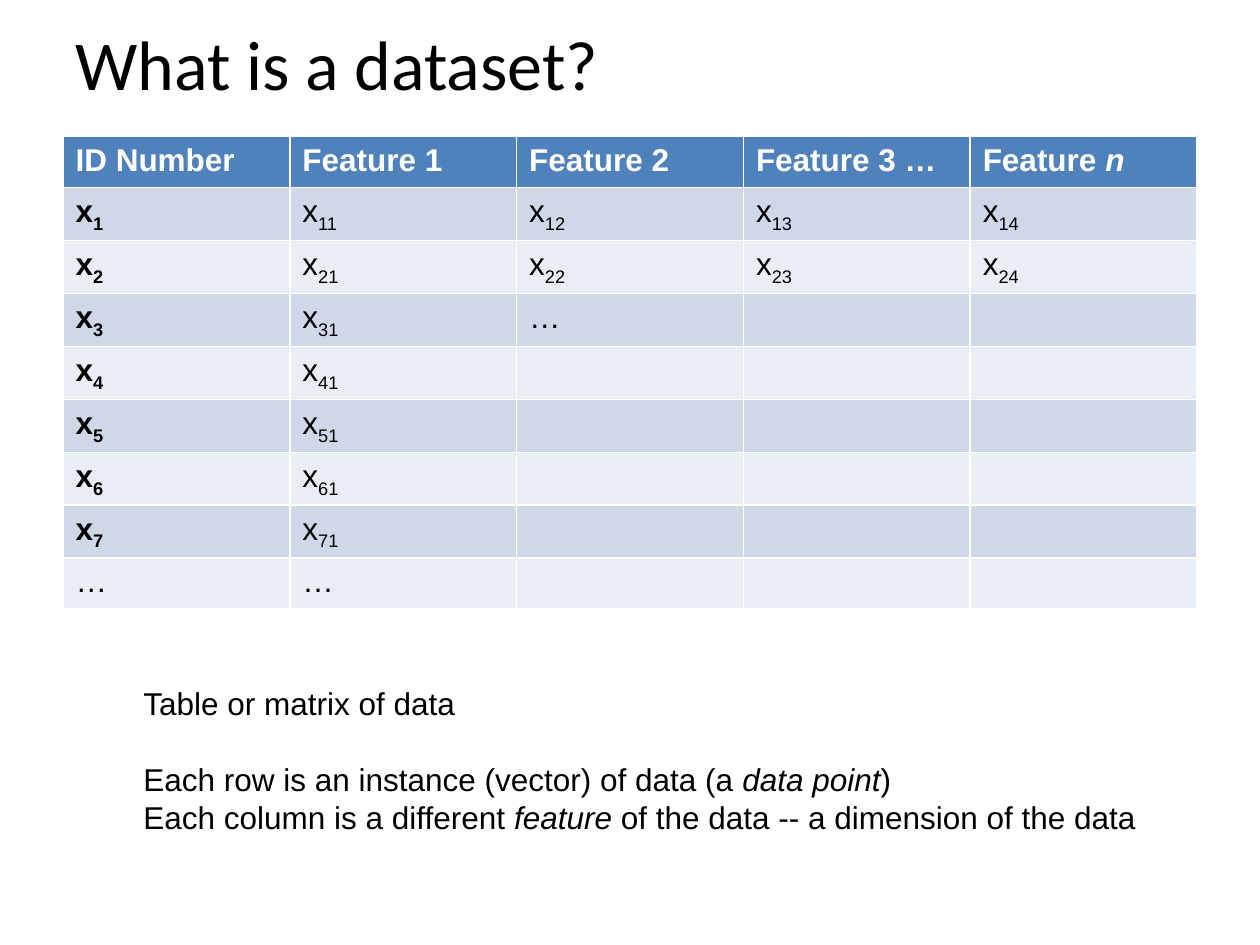
from pptx import Presentation
from pptx.dml.color import RGBColor
from pptx.enum.text import MSO_ANCHOR, MSO_AUTO_SIZE, PP_ALIGN
from pptx.util import Pt

COLORS = {
    "text": "000000",
    "header_text": "FFFFFF",
    "header": "4F81BD",
    "odd_row": "D0D8E8",
    "even_row": "E9EDF4",
}


def add_run(paragraph, text, color="text", size=18, font="Arial", bold=False):
    run = paragraph.add_run()
    run.text = text
    run.font.size = Pt(size)
    run.font.name = font
    run.font.bold = bold
    run.font.color.rgb = RGBColor.from_string(COLORS[color])
    return run


prs = Presentation()
prs.slide_width, prs.slide_height = Pt(720), Pt(540)
slide = prs.slides.add_slide(prs.slide_layouts[5])

# Title
title = slide.shapes.title
title.left, title.top, title.width, title.height = Pt(36), Pt(0), Pt(648), Pt(72)
title.text_frame.vertical_anchor = MSO_ANCHOR.MIDDLE
heading = title.text_frame.paragraphs[0]
heading.alignment = PP_ALIGN.LEFT
add_run(heading, "What is a dataset?", size=40, font="Calibri")

# Dataset table: a name and its subscript are separated by "_"
headers = ["ID Number", "Feature 1", "Feature 2", "Feature 3 …", "Feature "]
instances = [[f"x_{i}", f"x_{i}1"] for i in range(1, 8)]
for i in (1, 2):
    instances[i - 1] += [f"x_{i}{j}" for j in (2, 3, 4)]
instances[2].append("…")
instances.append(["…", "…"])

dataset = slide.shapes.add_table(
    len(instances) + 1, len(headers), Pt(36), Pt(78), Pt(648), Pt(262.8)
).table
for row in dataset.rows:
    row.height = Pt(29.2)

for c, header in enumerate(headers):
    cell = dataset.cell(0, c)
    cell.fill.solid()
    cell.fill.fore_color.rgb = RGBColor.from_string(COLORS["header"])
    add_run(cell.text_frame.paragraphs[0], header, "header_text", bold=True)
last_header = dataset.cell(0, len(headers) - 1).text_frame.paragraphs[0]
add_run(last_header, "n", "header_text", bold=True).font.italic = True

for r, values in enumerate(instances, start=1):
    band = COLORS["odd_row" if r % 2 else "even_row"]
    for c in range(len(headers)):
        cell = dataset.cell(r, c)
        cell.fill.solid()
        cell.fill.fore_color.rgb = RGBColor.from_string(band)
        if c >= len(values):
            continue
        entry = cell.text_frame.paragraphs[0]
        name, _, subscript = values[c].partition("_")
        is_id = c == 0 and subscript != ""
        add_run(entry, name, bold=is_id)
        if subscript:
            index = add_run(entry, subscript, bold=is_id)
            index.font._element.set("baseline", "-25000")

# Explanation: every second piece of a line is italic
explanation = [
    ["Table or matrix of data"],
    ["Each row is an instance (vector) of data (a ", "data point", ")"],
    ["Each column is a different ", "feature",
     " of the data -- a dimension of the data"],
]
notes_frame = slide.shapes.add_textbox(
    Pt(74.9), Pt(387.4), Pt(591), Pt(94.3)
).text_frame
notes_frame.word_wrap = True
notes_frame.auto_size = MSO_AUTO_SIZE.SHAPE_TO_FIT_TEXT
for n, pieces in enumerate(explanation):
    line = notes_frame.add_paragraph() if n else notes_frame.paragraphs[0]
    for k, piece in enumerate(pieces):
        add_run(line, piece).font.italic = k % 2 == 1
notes_frame.paragraphs[1].space_before = Pt(21.6)

prs.save("out.pptx")
